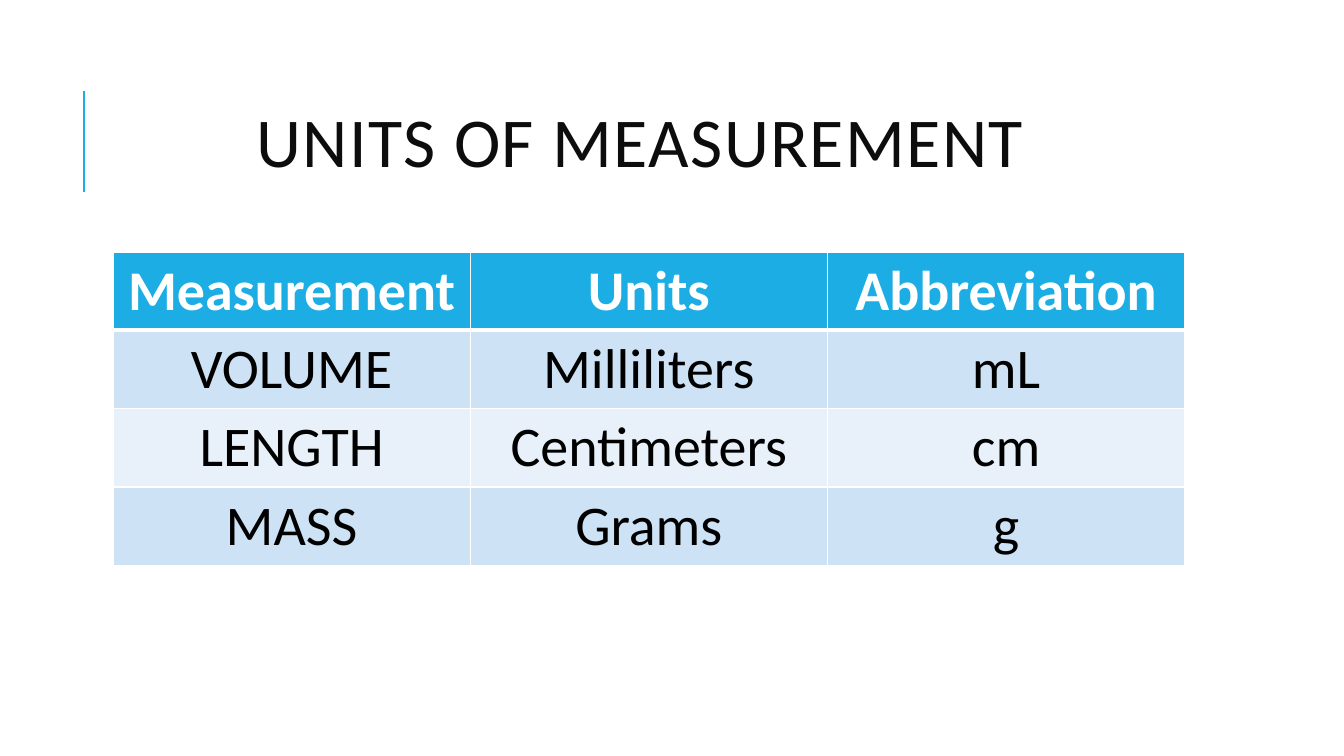
from lxml import etree
from pptx import Presentation
from pptx.dml.color import RGBColor
from pptx.enum.shapes import MSO_CONNECTOR
from pptx.enum.text import MSO_ANCHOR, PP_ALIGN
from pptx.oxml import parse_xml
from pptx.oxml.ns import nsdecls, qn
from pptx.util import Inches, Pt

BLUE = RGBColor(0x1C, 0xAD, 0xE4)
PALE_BLUE = RGBColor(0xCD, 0xE3, 0xF5)
PALEST_BLUE = RGBColor(0xE8, 0xF1, 0xFA)
WHITE = RGBColor(0xFF, 0xFF, 0xFF)
BLACK = RGBColor(0x00, 0x00, 0x00)
NEAR_BLACK = RGBColor(0x0D, 0x0D, 0x0D)

UNITS = [
    ("Measurement", "Units", "Abbreviation"),
    ("VOLUME", "Milliliters", "mL"),
    ("LENGTH", "Centimeters", "cm"),
    ("MASS", "Grams", "g"),
]
LEFT, WIDTH = Inches(1.12), Inches(10.63)
ROW_HEIGHT = Inches(0.77)


def add_text(paragraph, text, size, color, bold=False):
    paragraph.alignment = PP_ALIGN.CENTER
    run = paragraph.add_run()
    run.text = text
    run.font.name = "Calibri"
    run.font.size = Pt(size)
    run.font.bold = bold
    run.font.color.rgb = color
    return run


def set_borders(cell, bottom_width):
    """Draw white borders of 1 point, with a bottom one of its own width."""
    properties = cell._tc.get_or_add_tcPr()
    sides = {"lnL": 1, "lnR": 1, "lnT": 1, "lnB": bottom_width}
    for position, (side, width) in enumerate(sides.items()):
        properties.insert(position, parse_xml(
            f'<a:{side} {nsdecls("a")} w="{Pt(width)}"><a:solidFill>'
            f'<a:srgbClr val="{WHITE}"/></a:solidFill></a:{side}>'))


prs = Presentation()
prs.slide_width, prs.slide_height = Inches(13.33), Inches(7.5)
slide = prs.slides.add_slide(prs.slide_layouts[5])

accent = slide.shapes.add_connector(
    MSO_CONNECTOR.STRAIGHT, Inches(0.83), Inches(1.9), Inches(0.83), Inches(0.9))
accent.line.color.rgb = BLUE
accent.line.width = Pt(1.5)
etree.SubElement(accent._element.spPr, qn("a:effectLst"))

title = slide.shapes.title
title.left, title.top = LEFT, Inches(0.64)
title.width, title.height = WIDTH, Inches(1.64)
title.text_frame.vertical_anchor = MSO_ANCHOR.MIDDLE
heading = title.text_frame.paragraphs[0]
heading.line_spacing = 0.8
heading_run = add_text(heading, "UNITS OF MEASUREMENT ", 50, NEAR_BLACK)
heading_run.font._element.set("spc", "100")

table = slide.shapes.add_table(
    len(UNITS), len(UNITS[0]), LEFT, Inches(2.5), WIDTH, ROW_HEIGHT * len(UNITS)).table
for row, entries in enumerate(UNITS):
    is_header = row == 0
    if is_header:
        fill = BLUE
    else:
        fill = PALE_BLUE if row % 2 else PALEST_BLUE
    for column, entry in enumerate(entries):
        cell = table.cell(row, column)
        cell.fill.solid()
        cell.fill.fore_color.rgb = fill
        set_borders(cell, 3 if is_header else 1)
        add_text(cell.text_frame.paragraphs[0], entry, 40,
                 WHITE if is_header else BLACK, is_header)

prs.save("out.pptx")
